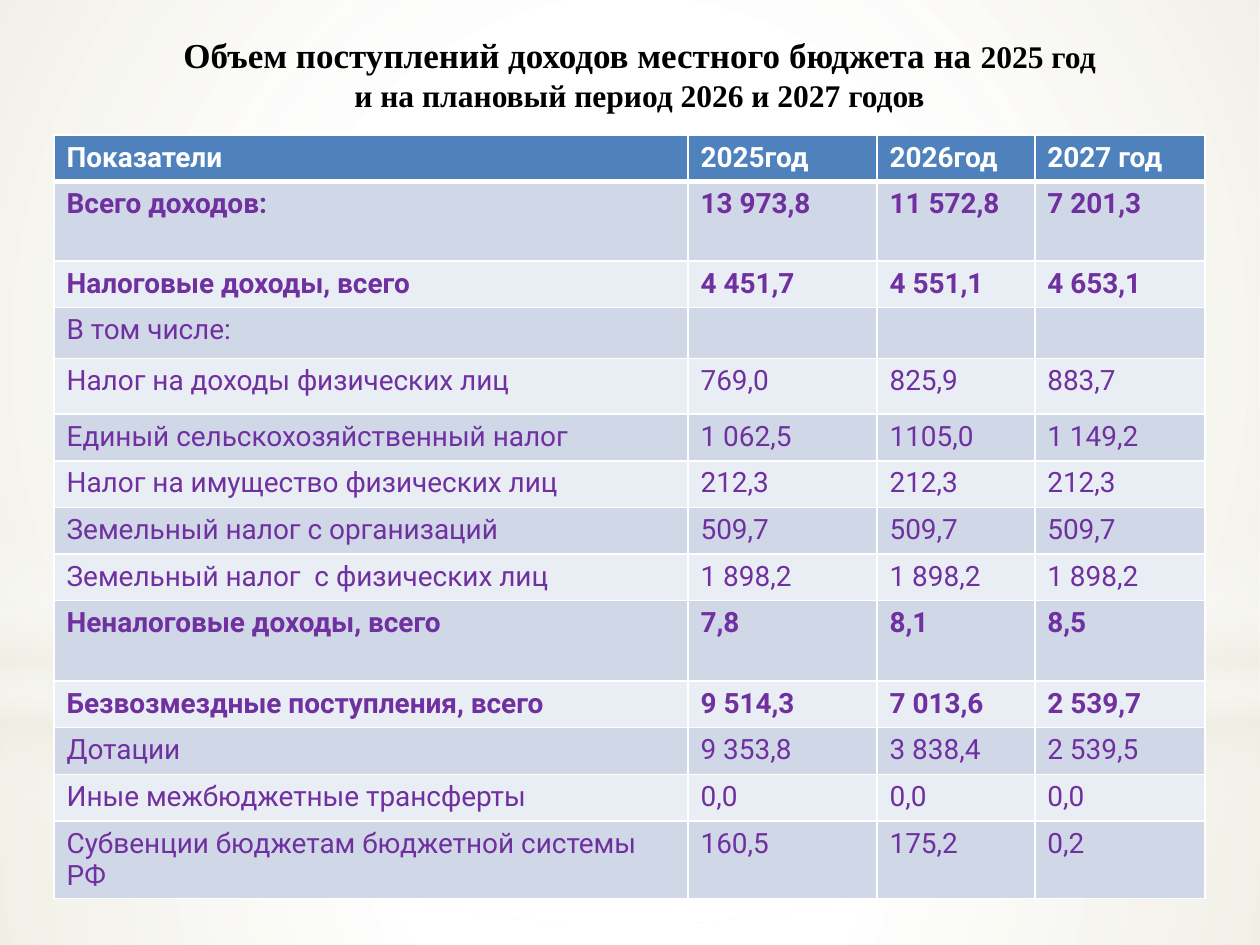
"""Build the slide with the table of local budget revenues for 2025-2027."""
from lxml import etree
from pptx import Presentation
from pptx import util as u
from pptx.dml.color import RGBColor
from pptx.enum import shapes, text
from pptx.oxml import ns

WHITE = RGBColor(0xFF, 0xFF, 0xFF)
BLACK = RGBColor(0, 0, 0)
CREAM = RGBColor(0xEE, 0xEC, 0xE1)
BLUE = RGBColor(0x4F, 0x81, 0xBD)
PURPLE = RGBColor(0x70, 0x30, 0xA0)
BANDS = RGBColor(0xD0, 0xD8, 0xE8), RGBColor(0xE9, 0xED, 0xF4)


def add_element(parent, tag, **attributes):
    return etree.SubElement(parent, ns.qn(tag), attributes)


def format_font(font, color, values):
    font.color.rgb = color
    for name, value in values.items():
        setattr(font, name, value)


presentation = Presentation()
presentation.slide_width, presentation.slide_height = u.Cm(25.4), u.Cm(19.05)
slide = presentation.slides.add_slide(presentation.slide_layouts[5])

RECTANGLE = shapes.MSO_SHAPE.RECTANGLE
OVAL = shapes.MSO_SHAPE.OVAL
BACKDROP = [
    (RECTANGLE, 14.17, 4.88, "circle",
     [(0, WHITE, 91), (37, WHITE, 76), (100, CREAM, 79)]),
    (RECTANGLE, 0, 14.17, "circle",
     [(0, WHITE, 89), (48, WHITE, 62), (100, CREAM, 79)]),
    (RECTANGLE, 10.46, 6.35, "linear",
     [(0, WHITE, 0), (29, WHITE, 30), (45, CREAM, 40),
      (55, WHITE, 26), (65, CREAM, 60), (100, WHITE, 0)]),
    (OVAL, 4.45, 14.17, "circle", [(0, WHITE, 100), (56, WHITE, 0)]),
]
for kind, top, height, direction, stops in BACKDROP:
    shape = slide.shapes.add_shape(kind, 0, u.Cm(top), presentation.slide_width, u.Cm(height))
    shape.shadow.inherit = False
    shape.line.fill.background()
    gradient = etree.Element(ns.qn("a:gradFill"), rotWithShape="1")
    stop_list = add_element(gradient, "a:gsLst")
    for position, color, opacity in stops:
        stop = add_element(stop_list, "a:gs", pos=str(position * 1000))
        stop_color = add_element(stop, "a:srgbClr", val=str(color))
        add_element(stop_color, "a:alpha", val=str(opacity * 1000))
    if direction == "circle":
        center = add_element(gradient, "a:path", path="circle")
        add_element(center, "a:fillToRect", l="50000", t="50000", r="50000", b="50000")
    else:
        add_element(gradient, "a:lin", ang="5400000", scaled="0")
    shape._element.spPr.find(ns.qn("a:prstGeom")).addnext(gradient)

ROWS = [
    (0.94, True, "Показатели", "2025год", "2026год", "2027 год"),
    (1.6, True, "Всего доходов:", "13 973,8", "11 572,8", "7 201,3"),
    (0.94, True, "Налоговые доходы, всего", "4 451,7", "4 551,1", "4 653,1"),
    (1.02, False, "В том числе:", "", "", ""),
    (1.12, False, "Налог на доходы физических лиц", "769,0", "825,9", "883,7"),
    (0.94, False, "Единый сельскохозяйственный налог", "1 062,5", "1105,0", "1 149,2"),
    (0.94, False, "Налог на имущество физических лиц", "212,3", "212,3", "212,3"),
    (0.94, False, "Земельный налог с организаций", "509,7", "509,7", "509,7"),
    (0.94, False, "Земельный налог  с физических лиц", "1 898,2", "1 898,2", "1 898,2"),
    (1.62, True, "Неналоговые доходы, всего", "7,8", "8,1", "8,5"),
    (0.94, True, "Безвозмездные поступления, всего", "9 514,3", "7 013,6", "2 539,7"),
    (0.94, False, "Дотации", "9 353,8", "3 838,4", "2 539,5"),
    (0.94, False, "Иные межбюджетные трансферты", "0,0", "0,0", "0,0"),
    (1.24, False, "Субвенции бюджетам бюджетной системы РФ", "160,5", "175,2", "0,2"),
]
WIDTHS = [12.78, 3.81, 3.18, 3.43]
frame = slide.shapes.add_table(len(ROWS), len(WIDTHS), u.Cm(1.09), u.Cm(2.72),
                               u.Cm(sum(WIDTHS)), u.Cm(sum(row[0] for row in ROWS)))
table = frame.table
for column, width in zip(table.columns, WIDTHS):
    column.width = u.Cm(width)
for index, (height, bold, *values) in enumerate(ROWS):
    table.rows[index].height = u.Cm(height)
    edges = {"a:lnL": 1, "a:lnR": 1,
             "a:lnT": 3 if index == 1 else 1, "a:lnB": 3 if index == 0 else 1}
    for cell, value in zip(table.rows[index].cells, values):
        cell.fill.solid()
        cell.fill.fore_color.rgb = BANDS[(index - 1) % 2] if index else BLUE
        properties = cell._tc.get_or_add_tcPr()
        for place, (tag, points) in enumerate(edges.items()):
            border = etree.Element(ns.qn(tag), w=str(u.Pt(points)))
            border_fill = add_element(border, "a:solidFill")
            add_element(border_fill, "a:srgbClr", val=str(WHITE))
            properties.insert(place, border)
        if value:
            run = cell.text_frame.paragraphs[0].add_run()
            run.text = value
            format_font(run.font, PURPLE if index else WHITE,
                        {"name": "Roboto", "size": u.Pt(16), "bold": bold})

title = slide.shapes.title
slide.shapes._spTree.append(title._element)
title.left, title.top, title.width, title.height = (
    u.Cm(length) for length in (2.29, 0.33, 21.21, 2.31))
title_frame = title.text_frame
FRAME_FORMAT = {"word_wrap": True, "vertical_anchor": text.MSO_ANCHOR.MIDDLE,
                "auto_size": text.MSO_AUTO_SIZE.SHAPE_TO_FIT_TEXT}
for name, value in FRAME_FORMAT.items():
    setattr(title_frame, name, value)
TITLE_LINES = [
    [("Объем поступлений доходов местного бюджета на ", 20), ("2025 год", 18)],
    [("и на плановый период 2026 и 2027 годов", 18)],
]
title_frame.add_paragraph()
for paragraph, line in zip(title_frame.paragraphs, TITLE_LINES):
    paragraph.alignment = text.PP_ALIGN.CENTER
    for words, size in line:
        run = paragraph.add_run()
        run.text = words
        format_font(run.font, BLACK,
                    {"name": "Times New Roman", "size": u.Pt(size), "bold": True})

presentation.save("out.pptx")
